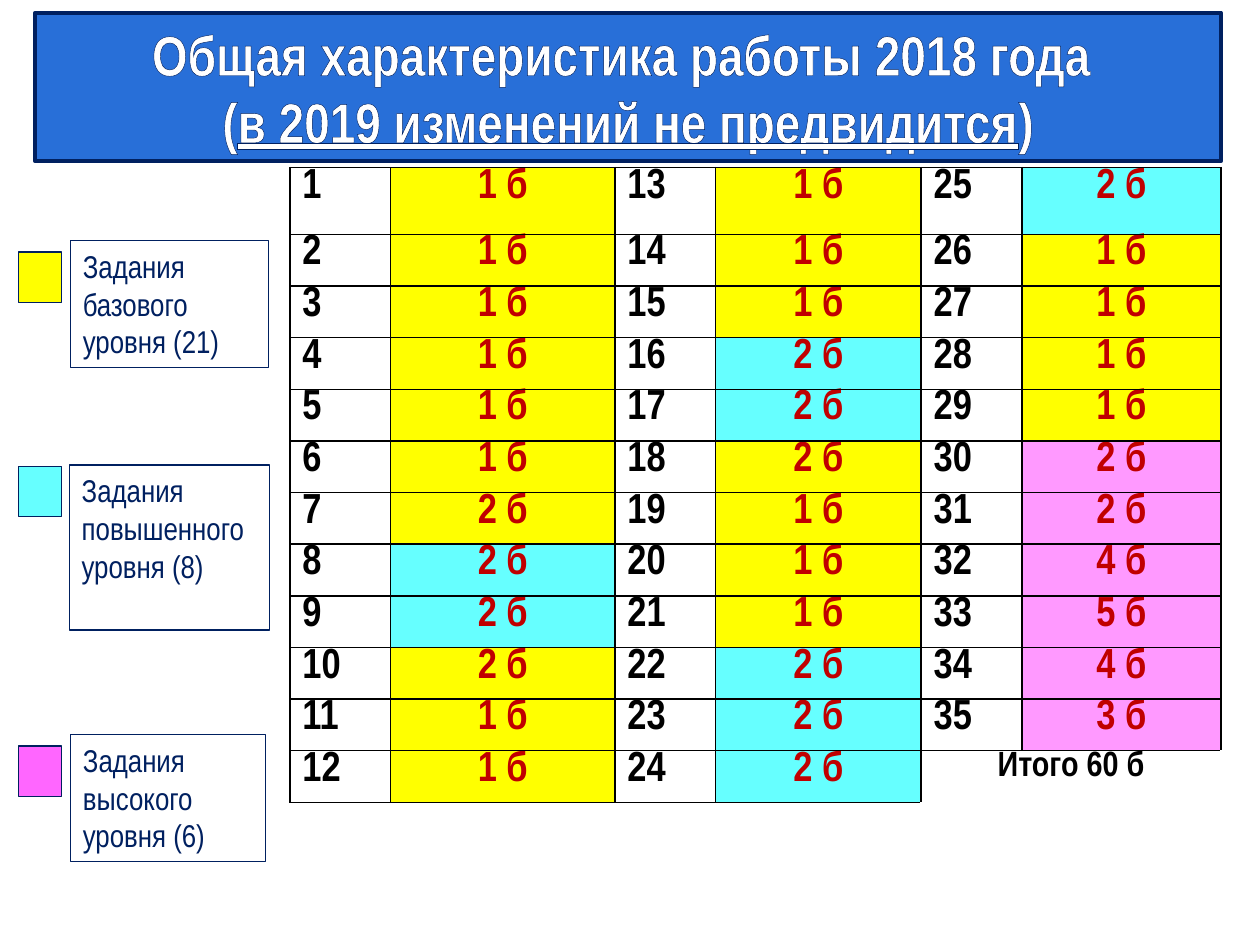
from lxml.etree import SubElement
from pptx import Presentation
from pptx.dml.color import RGBColor
from pptx.enum.shapes import MSO_SHAPE
from pptx.enum.text import MSO_ANCHOR, PP_ALIGN
from pptx.oxml.ns import qn
from pptx.util import Inches, Pt

TITLE = [
    [("Общая характеристика работы 2018 года ", False)],
    [("(", False), ("в 2019 изменений не предвидится", True), (")", False)],
]
KEYS = [
    ("Задания базового уровня (21)", "FFFF00", 2, (0.56, 1.91, 1.57, 1.01)),
    ("Задания повышенного уровня (8)", "66FFFF", 3.7, (0.55, 3.69, 1.59, 1.31)),
    ("Задания высокого уровня (6)", "FF66FF", 5.92, (0.56, 5.83, 1.55, 1.01)),
]
MARKS = [
    ("111111222211", "BBBBBBBAABBB"),
    ("111222111222", "BBBAABBBBAAA"),
    ("21111224543", "ABBBBHHHHHH"),
]
TOTAL = "Итого 60 б"
COLS = [0.8, 1.78, 0.8, 1.63, 0.8, 1.58]
ROWS = [0.53] + [0.41] * 11
THEME = {
    "font": "Arial Narrow", "navy": "002060", "blue": "286FD8",
    "white": "FFFFFF", "black": "000000", "red": "C00000",
    "B": "FFFF00", "A": "66FFFF", "H": "FF99FF",
    "title": 32, "cell": 24, "total": 20, "key": 18,
}


def tint(name):
    """Return a colour by theme name or hex value."""
    return RGBColor.from_string(THEME.get(name, name))


def put(item, **vals):
    """Set each named value on an object."""
    for key, val in vals.items():
        setattr(item, key, val)


def write(para, text, size, color, bold=False, line=False):
    """Add one formatted run to a paragraph."""
    run = para.add_run()
    run.text = text
    put(run.font, name=THEME["font"], size=Pt(THEME[size]), bold=bold, underline=line)
    run.font.color.rgb = tint(color)
    return run


def stroke(root, tag, color, width):
    """Add a solid line element and return it."""
    line = SubElement(root, qn(tag), w=str(Pt(width)))
    fill = SubElement(line, qn("a:solidFill"))
    SubElement(fill, qn("a:srgbClr"), val=THEME[color])
    return line


def block(slide, area, fill, width=0.75):
    """Add a bordered rectangle with plain left text."""
    box = slide.shapes.add_shape(MSO_SHAPE.RECTANGLE, *map(Inches, area))
    box.shadow.inherit = False
    box.fill.solid()
    box.fill.fore_color.rgb = tint(fill)
    box.line.color.rgb = tint("navy")
    box.line.width = Pt(width)
    put(box.text_frame, word_wrap=True, vertical_anchor=MSO_ANCHOR.TOP)
    box.text_frame.paragraphs[0].alignment = PP_ALIGN.LEFT
    return box


def paint(cell, text, fill, size="cell", color="black", mid=False, sides="LRTB"):
    """Fill, border and label one table cell."""
    put(cell, margin_top=0, margin_bottom=0)
    props = cell._tc.get_or_add_tcPr()
    for side in sides:
        stroke(props, f"a:ln{side}", "black", 1)
    cell.fill.solid()
    cell.fill.fore_color.rgb = tint(fill)
    if text:
        para = cell.text_frame.paragraphs[0]
        para.alignment = PP_ALIGN.CENTER if mid else PP_ALIGN.LEFT
        write(para, text, size, color, True)


def grid(slide):
    """Build the table of tasks and points."""
    area = (2.3, 1.33, sum(COLS), sum(ROWS))
    table = slide.shapes.add_table(len(ROWS), len(COLS), *map(Inches, area)).table
    put(table, first_row=False, horz_banding=False)
    for col, size in zip(table.columns, COLS):
        col.width = Inches(size)
    for row, size in zip(table.rows, ROWS):
        row.height = Inches(size)
    for pair, (points, kinds) in enumerate(MARKS):
        for row, (point, kind) in enumerate(zip(points, kinds)):
            num = pair * len(ROWS) + row + 1
            paint(table.cell(row, 2 * pair), str(num), "white")
            paint(table.cell(row, 2 * pair + 1), f"{point} б", kind, color="red", mid=True)
    first, last = table.cell(11, 4), table.cell(11, 5)
    first.merge(last)
    paint(first, TOTAL, "white", "total", mid=True, sides="LT")
    paint(last, "", "white", sides="T")


def legend(slide):
    """Place the colour squares and their labels."""
    for text, color, top, area in KEYS:
        block(slide, (0.15, top, 0.34, 0.4), color)
        box = block(slide, area, "white")
        write(box.text_frame.paragraphs[0], text, "key", "navy")


def banner(slide):
    """Place the title with outlined letters."""
    frame = block(slide, (0.28, 0.1, 9.41, 1.18), "blue", 2.25).text_frame
    frame.vertical_anchor = MSO_ANCHOR.MIDDLE
    for num, parts in enumerate(TITLE):
        para = frame.add_paragraph() if num else frame.paragraphs[0]
        para.alignment = PP_ALIGN.CENTER
        for text, line in parts:
            run = write(para, text, "title", "white", True, line)
            props = run._r.get_or_add_rPr()
            props.insert(0, stroke(props, "a:ln", "navy", 0.75))


def main():
    """Build and save the slide."""
    deck = Presentation()
    put(deck, slide_width=Inches(10), slide_height=Inches(7.5))
    slide = deck.slides.add_slide(deck.slide_layouts[6])
    for draw in (grid, legend, banner):
        draw(slide)
    deck.save("out.pptx")


if __name__ == "__main__":
    main()
